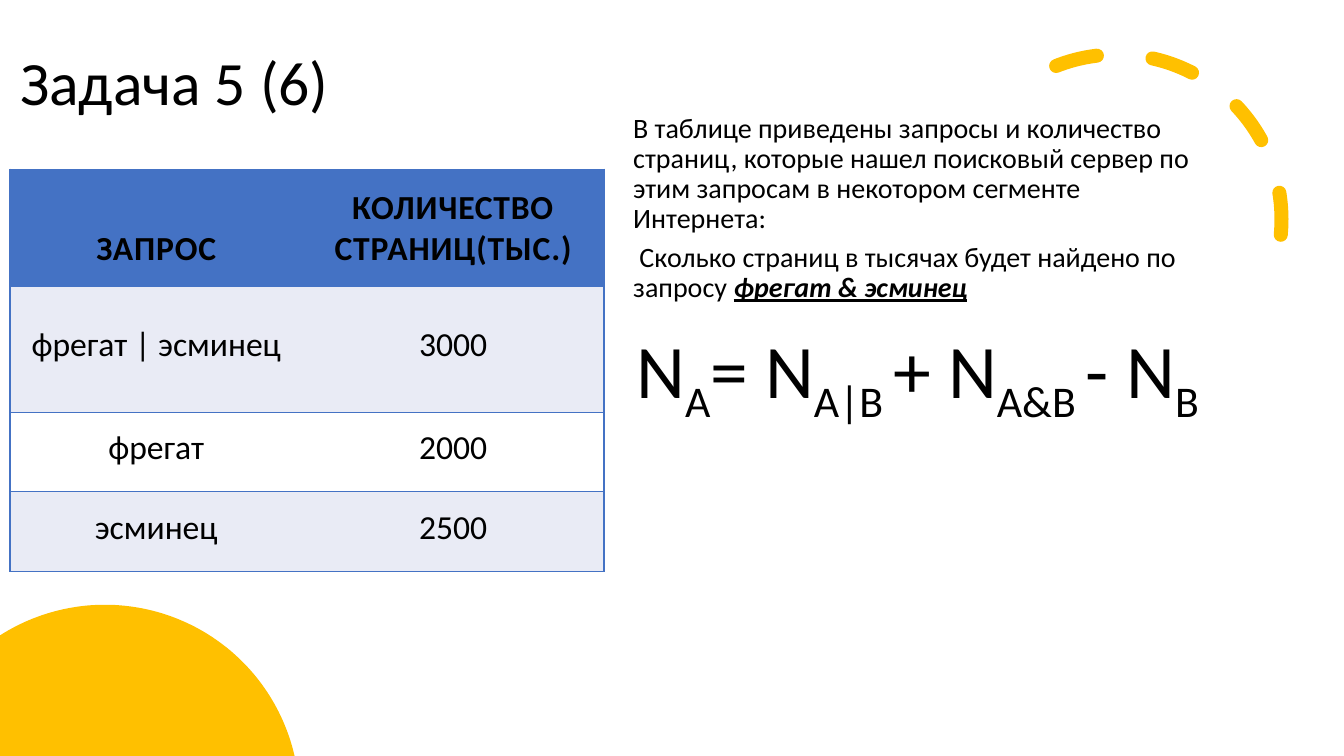
from dataclasses import dataclass
from math import acos, asin, cos, sin

from lxml.etree import SubElement
from pptx import Presentation
from pptx.dml.color import RGBColor
from pptx.enum.dml import MSO_LINE
from pptx.enum.shapes import MSO_SHAPE
from pptx.enum.text import MSO_ANCHOR, MSO_AUTO_SIZE, PP_ALIGN
from pptx.oxml.ns import qn
from pptx.util import Inches, Pt


@dataclass(frozen=True)
class Theme:
    font: str = "Calibri"
    ink: str = "000000"
    gold: str = "FFC000"
    blue: str = "4472C4"
    pale: str = "E9EBF5"
    white: str = "FFFFFF"
    title: int = 44
    body: int = 20
    cell: int = 24
    formula: int = 54


PLAIN_TABLE = "{2D5ABB26-0587-4C30-8999-92F81FD0307C}"
ROWS = [
    ("ЗАПРОС", "КОЛИЧЕСТВО СТРАНИЦ(ТЫС.)"),
    ("фрегат | эсминец", "3000"),
    ("фрегат", "2000"),
    ("эсминец", "2500"),
]
TASK = [
    [("В таблице приведены запросы и количество страниц, которые нашел "
      "поисковый сервер по этим запросам в некотором сегменте Интернета:", {})],
    [(" Сколько страниц в тысячах будет найдено по запросу ", {}),
     ("фрегат & эсминец", {"bold": True, "italic": True, "underline": True})],
]
FORMULA = [("N", "A"), ("= N", "A|B "), ("+ N", "A&B "), ("- N", "B")]


def assign(item, values):
    for name, value in values.items():
        setattr(item, name, value)


def place(shape, box):
    names = ("left", "top", "width", "height")
    assign(shape, dict(zip(names, map(Inches, box))))


class Board:
    def __init__(self, deck, theme):
        self.theme = theme
        self.slide = deck.slides.add_slide(deck.slide_layouts[3])

    def add_text(self, para, text, size, look=None, marks=None):
        """Add a run; marks are raw run attributes such as spc and baseline."""
        run = para.add_run()
        run.text = text
        assign(run.font, {"name": self.theme.font, "size": Pt(size), **(look or {})})
        run.font.color.rgb = RGBColor.from_string(self.theme.ink)
        for name, value in (marks or {}).items():
            run.font._element.set(name, value)

    def fill(self, index, box, paras, size, anchor=MSO_ANCHOR.TOP, before=0, after=0):
        """Move a placeholder and fill it with paragraphs of runs."""
        holder = self.slide.placeholders[index]
        place(holder, box)
        frame = holder.text_frame
        assign(frame, {"word_wrap": True, "auto_size": MSO_AUTO_SIZE.NONE,
                       "vertical_anchor": anchor})
        for i, runs in enumerate(paras):
            para = frame.add_paragraph() if i else frame.paragraphs[0]
            assign(para, {"alignment": PP_ALIGN.LEFT, "line_spacing": 0.9,
                          "space_before": Pt(before), "space_after": Pt(after)})
            props = para._p.get_or_add_pPr()
            props.set("marL", "0")
            props.set("indent", "0")
            SubElement(props, qn("a:buNone"))
            for run in runs:
                self.add_text(para, run[0], size, *run[1:])

    def arc(self, box, turn, start, end):
        """Draw a mirrored arc in thick, round-ended dashes."""
        arc = self.slide.shapes.add_shape(MSO_SHAPE.ARC, *map(Inches, box))
        arc.shadow.inherit = False
        arc.adjustments[0], arc.adjustments[1] = start, end
        arc.rotation = turn
        arc.element.spPr.get_or_add_xfrm().set("flipH", "1")
        arc.fill.background()
        arc.line.color.rgb = RGBColor.from_string(self.theme.gold)
        assign(arc.line, {"width": Pt(10), "dash_style": MSO_LINE.DASH})
        arc.line._get_or_add_ln().set("cap", "rnd")

    def disc(self, mid, top, radius, floor, steps=80):
        """Draw a disc cut off by the left and bottom slide edges."""
        level = top + radius
        first = acos(-mid / radius)
        last = asin((level - floor) / radius)
        turns = [first + (last - first) * i / steps for i in range(steps + 1)]
        rim = [(mid + radius * cos(t), level - radius * sin(t)) for t in turns]
        points = [(Inches(x), Inches(y)) for x, y in [(0, floor)] + rim]
        pen = self.slide.shapes.build_freeform(*points[0])
        pen.add_line_segments(points[1:], close=True)
        disc = pen.convert_to_shape()
        disc.shadow.inherit = False
        disc.fill.solid()
        disc.fill.fore_color.rgb = RGBColor.from_string(self.theme.gold)
        disc.line.fill.background()

    def edge(self, cell, sides):
        props = cell._tc.get_or_add_tcPr()
        for side in sides:
            line = SubElement(props, qn("a:ln" + side), w=str(Pt(1)))
            paint = SubElement(line, qn("a:solidFill"))
            SubElement(paint, qn("a:srgbClr"), val=self.theme.blue)

    def table(self, spot, widths, heights, rows):
        theme = self.theme
        size = (sum(widths), sum(heights))
        grid = self.slide.shapes.add_table(
            len(rows), len(widths), *map(Inches, spot + size)).table
        grid._tbl.tblPr[0].text = PLAIN_TABLE
        for col, width in zip(grid.columns, widths):
            col.width = Inches(width)
        for row, height in zip(grid.rows, heights):
            row.height = Inches(height)
        for r, texts in enumerate(rows):
            head = r == 0
            shade = theme.blue if head else (theme.white, theme.pale)[r % 2]
            for c, text in enumerate(texts):
                cell = grid.cell(r, c)
                assign(cell, {
                    "margin_left": Inches(0.17), "margin_right": Inches(0.17),
                    "margin_top": Inches(0.17 if head else 0.09),
                    "margin_bottom": Inches(0.17),
                    "vertical_anchor": MSO_ANCHOR.BOTTOM if head else MSO_ANCHOR.MIDDLE,
                })
                self.edge(cell, "RTB" if c else "LTB")
                cell.fill.solid()
                cell.fill.fore_color.rgb = RGBColor.from_string(shade)
                para = cell.text_frame.paragraphs[0]
                para.alignment = PP_ALIGN.CENTER
                self.add_text(para, text, theme.cell, {"bold": head},
                              {"spc": "60"} if head else None)


def main():
    deck = Presentation()
    assign(deck, {"slide_width": Inches(13.33), "slide_height": Inches(7.5)})
    theme = Theme()
    board = Board(deck, theme)
    board.arc((9.44, 0.54, 3.27, 3.27), 66.1, 144.42, 0)
    board.fill(0, (0.1, 0.12, 5.97, 1.45), [[("Задача 5 (6)",)]],
               theme.title, MSO_ANCHOR.MIDDLE)
    board.disc(1.04, 6, 1.93, 7.5)
    board.fill(1, (6.18, 1.08, 5.97, 2.01), TASK, theme.body, after=6)
    board.table((0.1, 1.68), (2.9, 2.99), (1.16, 1.25, 0.79, 0.79), ROWS)
    terms = [run for base, sub in FORMULA
             for run in ((base,), (sub, None, {"baseline": "-25000"}))]
    board.fill(2, (6.21, 3.17, 6.12, 1.08), [terms], theme.formula, before=10)
    deck.save("out.pptx")


if __name__ == "__main__":
    main()
